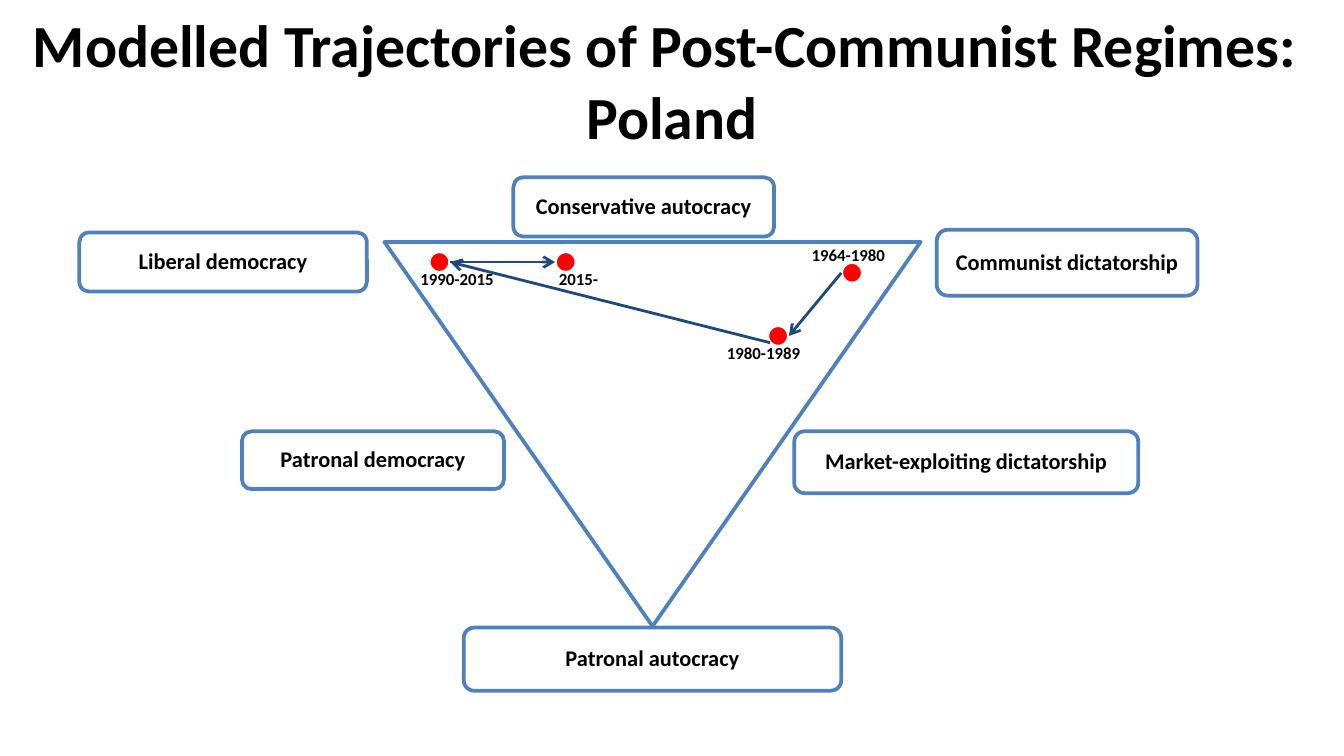
from dataclasses import dataclass

from lxml.etree import SubElement
from pptx import Presentation
from pptx.dml.color import RGBColor
from pptx.enum.shapes import MSO_CONNECTOR, MSO_SHAPE
from pptx.enum.text import MSO_ANCHOR, MSO_AUTO_SIZE, PP_ALIGN
from pptx.oxml.ns import qn
from pptx.util import Inches, Pt

COLORS = {
    "text": "000000",
    "paper": "FFFFFF",
    "outline": "4F81BD",
    "arrow": "1F497D",
    "dot": "FF0000",
}
FONT = "Calibri"
PAGE_WIDTH = 10
PAGE_HEIGHT = PAGE_WIDTH * 9 / 16
DOT_SIZE = 0.16


@dataclass(frozen=True)
class Regime:
    name: str
    left: float
    top: float
    width: float
    height: float


@dataclass(frozen=True)
class Period:
    years: str
    dot_left: float
    dot_top: float
    label_left: float
    label_top: float


@dataclass(frozen=True)
class Move:
    start: tuple[float, float]
    end: tuple[float, float]


REGIMES = [
    Regime("Communist dictatorship", 6.97, 1.71, 1.94, 0.49),
    Regime("Liberal democracy", 0.59, 1.73, 2.14, 0.44),
    Regime("Patronal autocracy", 3.45, 4.67, 2.81, 0.47),
    Regime("Conservative autocracy", 3.82, 1.32, 1.94, 0.44),
    Regime("Market-exploiting dictatorship", 5.91, 3.21, 2.56, 0.46),
    Regime("Patronal democracy", 1.8, 3.21, 1.95, 0.43),
]
PERIODS = [
    Period("1964-1980", 6.26, 1.95, 5.94, 1.77),
    Period("1980-1989", 5.71, 2.42, 5.31, 2.5),
    Period("1990-2015", 3.19, 1.87, 3.03, 1.95),
    Period("2015-", 4.13, 1.87, 4.06, 1.95),
]
MOVES = [
    Move((6.26, 2.03), (5.87, 2.5)),
    Move((5.73, 2.55), (3.35, 1.95)),
    Move((3.35, 1.95), (4.13, 1.95)),
]


def color(name: str) -> RGBColor:
    return RGBColor.from_string(COLORS[name])


def add_span(para, text: str, size: float) -> None:
    span = para.add_run()
    span.text = text
    span.font.name = FONT
    span.font.size = Pt(size)
    span.font.bold = True
    span.font.color.rgb = color("text")


def add_outlined(page, kind, left: float, top: float, width: float,
                 height: float, fill: str | None, line: str):
    shape = page.shapes.add_shape(
        kind, Inches(left), Inches(top), Inches(width), Inches(height))
    shape.shadow.inherit = False
    if fill:
        shape.fill.solid()
        shape.fill.fore_color.rgb = color(fill)
    else:
        shape.fill.background()
    shape.line.color.rgb = color(line)
    shape.line.width = Pt(2)
    return shape


def add_title(page, lines: list[str]) -> None:
    title = page.shapes.title
    title.left, title.top = Inches(0), Inches(0.21)
    title.width, title.height = Inches(PAGE_WIDTH), Inches(0.77)
    title.text_frame.vertical_anchor = MSO_ANCHOR.MIDDLE
    para = title.text_frame.paragraphs[0]
    para.alignment = PP_ALIGN.CENTER
    for index, line in enumerate(lines):
        if index:
            para.add_line_break()
        add_span(para, line, 32)


def add_regime(page, regime: Regime) -> None:
    box = add_outlined(page, MSO_SHAPE.ROUNDED_RECTANGLE, regime.left, regime.top,
                       regime.width, regime.height, "paper", "outline")
    # Let a tenth of the background through
    fill = box.element.spPr.find(qn("a:solidFill"))
    SubElement(fill[0], qn("a:alpha"), val="90000")
    frame = box.text_frame
    frame.word_wrap = True
    frame.vertical_anchor = MSO_ANCHOR.MIDDLE
    frame.margin_left = frame.margin_right = Inches(0.07)
    frame.margin_top = frame.margin_bottom = Inches(0.07)
    para = frame.paragraphs[0]
    para.alignment = PP_ALIGN.CENTER
    para.line_spacing = 0.9
    add_span(para, regime.name, 12)


def add_dot(page, period: Period) -> None:
    add_outlined(page, MSO_SHAPE.OVAL, period.dot_left, period.dot_top,
                 DOT_SIZE, DOT_SIZE, "dot", "paper")


def add_years(page, period: Period) -> None:
    box = page.shapes.add_textbox(Inches(period.label_left), Inches(period.label_top),
                                  Inches(1.02), Inches(0.25))
    box.text_frame.word_wrap = True
    box.text_frame.auto_size = MSO_AUTO_SIZE.SHAPE_TO_FIT_TEXT
    add_span(box.text_frame.paragraphs[0], period.years, 9)


def add_move(page, move: Move) -> None:
    arrow = page.shapes.add_connector(
        MSO_CONNECTOR.STRAIGHT, *map(Inches, move.start + move.end))
    arrow.line.color.rgb = color("arrow")
    arrow.line.width = Pt(1.5)
    properties = arrow.element.spPr
    SubElement(properties.find(qn("a:ln")), qn("a:tailEnd"), type="arrow")
    SubElement(properties, qn("a:effectLst"))


def main() -> None:
    deck = Presentation()
    deck.slide_width, deck.slide_height = Inches(PAGE_WIDTH), Inches(PAGE_HEIGHT)
    page = deck.slides.add_slide(deck.slide_layouts[5])
    add_title(page, ["Modelled Trajectories of Post-Communist Regimes: ", "Poland"])

    # Regime triangle, pointing down, with its labelled corners and sides
    triangle = add_outlined(page, MSO_SHAPE.ISOSCELES_TRIANGLE,
                            2.86, 1.8, 3.99, 2.86, None, "outline")
    triangle.rotation = 180
    for regime in REGIMES:
        add_regime(page, regime)

    # Trajectory of the country through the triangle
    for period in PERIODS:
        add_dot(page, period)
    for move in MOVES:
        add_move(page, move)
    for period in PERIODS:
        add_years(page, period)

    deck.save("out.pptx")


if __name__ == "__main__":
    main()
